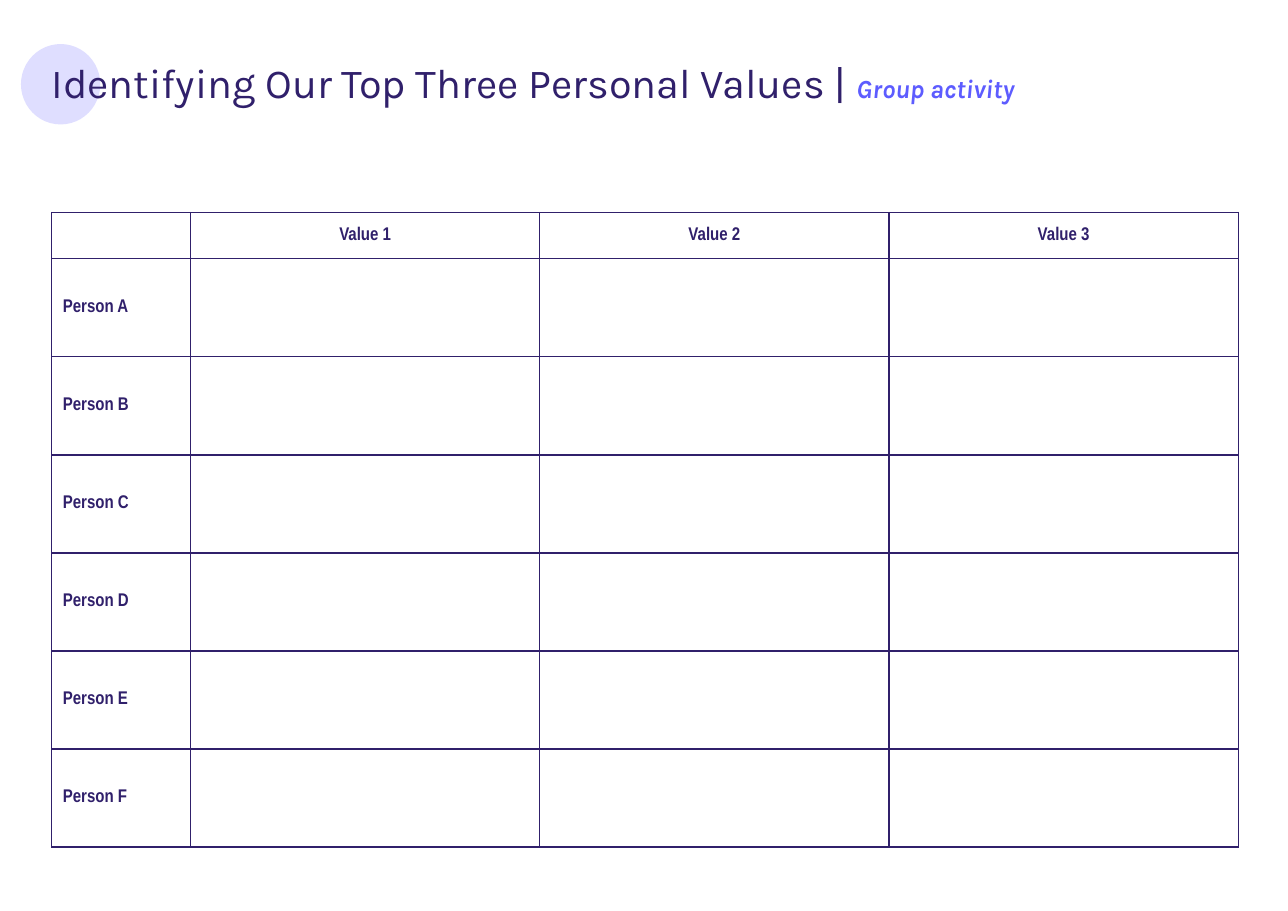
from lxml import etree
from pptx import Presentation
from pptx.dml.color import RGBColor
from pptx.enum.shapes import MSO_SHAPE
from pptx.enum.text import MSO_ANCHOR, PP_ALIGN
from pptx.oxml.ns import qn
from pptx.util import Inches, Pt

INDIGO, VIOLET, LILAC = "30206B", "5D5CFF", "DFDEFF"
LEFT = 0.47
VALUES = ["Value 1", "Value 2", "Value 3"]
PEOPLE = [f"Person {letter}" for letter in "ABCDEF"]


def color(hex_code):
    return RGBColor.from_string(hex_code)


def add_run(p, text, hex_code, **formats):
    r = p.add_run()
    r.text = text
    r.font.color.rgb = color(hex_code)
    for name, value in formats.items():
        setattr(r.font, name, value)


def set_borders(cell, hex_code, width):
    tc_pr = cell._tc.get_or_add_tcPr()
    for i, side in enumerate(("lnL", "lnR", "lnT", "lnB")):
        ln = etree.Element(qn(f"a:{side}"), w=str(Pt(width)))
        fill = etree.SubElement(ln, qn("a:solidFill"))
        etree.SubElement(fill, qn("a:srgbClr"), val=hex_code)
        tc_pr.insert(i, ln)


def add_title(s, left, top, width, height):
    """Heading over a circle that peeks out at its upper left."""
    circle = s.shapes.add_shape(MSO_SHAPE.OVAL, Inches(left - 0.28), Inches(top - 0.17),
                                Inches(0.72), Inches(0.73))
    circle.shadow.inherit = False
    circle.fill.solid()
    circle.fill.fore_color.rgb = color(LILAC)
    circle.line.fill.background()

    box = s.shapes.add_textbox(Inches(left), Inches(top), Inches(width), Inches(height))
    tf = box.text_frame
    tf.word_wrap = True
    for side in ("left", "right", "top", "bottom"):
        setattr(tf, f"margin_{side}", 0)
    p = tf.paragraphs[0]
    p.line_spacing = 0.9
    add_run(p, "Identifying Our Top Three Personal Values | ", INDIGO, name="Karla", size=Pt(27))
    add_run(p, "Group activity", VIOLET, name="Karla", size=Pt(17), bold=True, italic=True)


def fill_cell(cell, text, align):
    cell.fill.background()
    set_borders(cell, INDIGO, 1)
    if not text:
        return
    cell.vertical_anchor = MSO_ANCHOR.MIDDLE
    for side in ("left", "right", "top", "bottom"):
        setattr(cell, f"margin_{side}", Inches(0.1))
    p = cell.text_frame.paragraphs[0]
    p.alignment = align
    add_run(p, text, INDIGO, name="Arial Narrow", size=Pt(12), bold=True)


def add_values_table(s, left, top, width, height, label_width=1.26, header_height=0.42):
    """Empty grid with a row for each person and a column for each value."""
    rows = [["", *VALUES]] + [[person] + [""] * len(VALUES) for person in PEOPLE]
    table = s.shapes.add_table(len(rows), len(rows[0]), Inches(left), Inches(top),
                               Inches(width), Inches(height)).table
    table.first_row = table.horz_banding = False
    for j, column in enumerate(table.columns):
        column.width = Inches((width - label_width) / len(VALUES) if j else label_width)
    for i, row in enumerate(table.rows):
        row.height = Inches((height - header_height) / len(PEOPLE) if i else header_height)
        for cell, text in zip(row.cells, rows[i]):
            fill_cell(cell, text, PP_ALIGN.LEFT if i else PP_ALIGN.CENTER)


def main():
    prs = Presentation()
    prs.slide_width, prs.slide_height = Inches(11.69), Inches(8.27)
    s = prs.slides.add_slide(prs.slide_layouts[6])
    add_title(s, LEFT, 0.57, 10.04, 0.84)
    add_values_table(s, LEFT, 1.93, 10.77, 5.76)
    prs.save("out.pptx")


if __name__ == "__main__":
    main()
